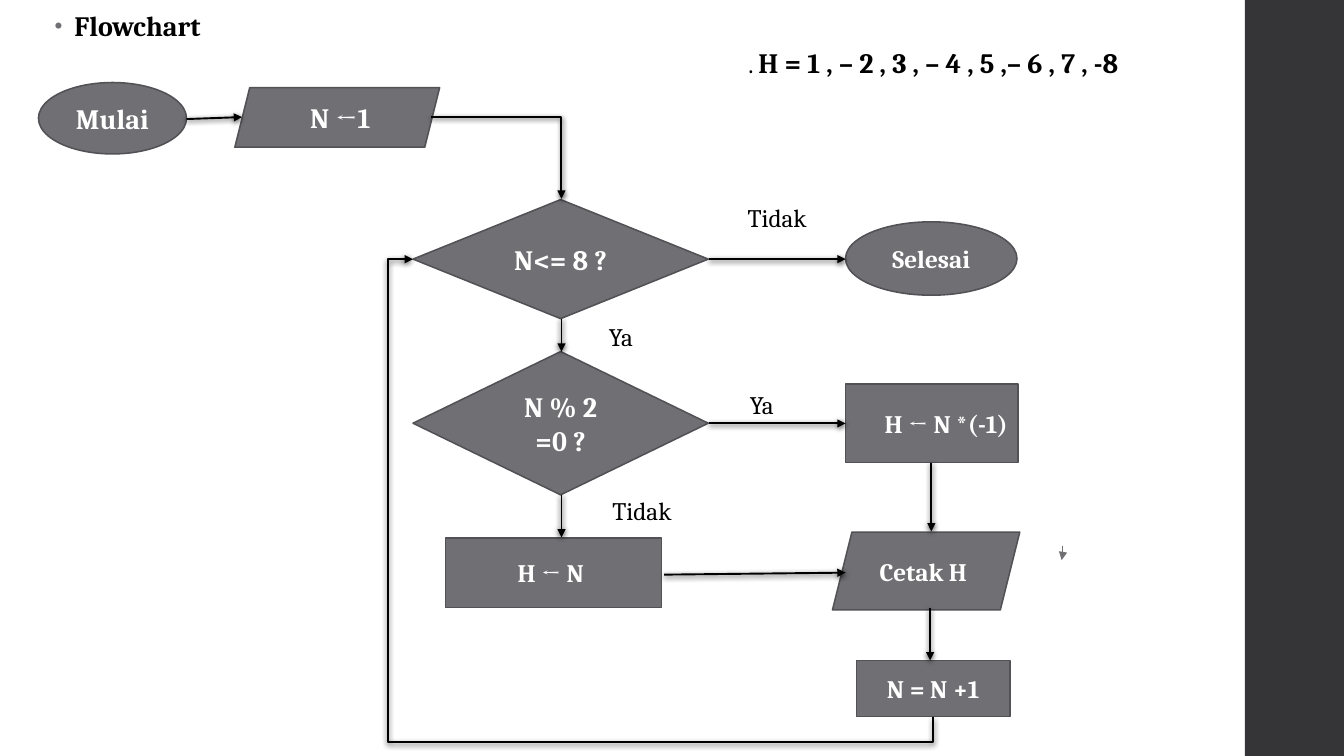
from lxml.etree import SubElement
from pptx import Presentation
from pptx.dml.color import RGBColor
from pptx.enum.shapes import MSO_CONNECTOR, MSO_SHAPE
from pptx.enum.text import MSO_ANCHOR, MSO_AUTO_SIZE, PP_ALIGN
from pptx.oxml.ns import qn
from pptx.util import Cm, Pt

GREY = RGBColor(0x6F, 0x6F, 0x74)
EDGE = RGBColor(0x52, 0x52, 0x56)
DARK = RGBColor(0x35, 0x35, 0x37)
BLACK = RGBColor(0, 0, 0)
WHITE = RGBColor(0xFF, 0xFF, 0xFF)


def put(item, form):
    for name, value in form.items():
        setattr(item, name, value)


def add(root, tag, **attrs):
    return SubElement(root, qn(tag), attrs)


class Chart:
    face = "Cambria"

    def __init__(self, slide):
        self.slide = slide
        self.shapes = slide.shapes

    def say(self, para, words, size, color=BLACK, bold=False):
        run = para.add_run()
        run.text = words
        put(run.font, {"name": self.face, "size": Pt(size), "bold": bold})
        run.font.color.rgb = color

    def fit(self, shape, align=PP_ALIGN.CENTER):
        frame = shape.text_frame
        put(frame, {"word_wrap": True, "vertical_anchor": MSO_ANCHOR.MIDDLE})
        para = frame.paragraphs[0]
        para.alignment = align
        return para

    def block(self, kind, place, fill, edge=None):
        shape = self.shapes.add_shape(kind, *map(Cm, place))
        shape.shadow.inherit = False
        shape.fill.solid()
        shape.fill.fore_color.rgb = fill
        if edge is None:
            shape.line.fill.background()
        else:
            shape.line.color.rgb = edge
            shape.line.width = Pt(1.1)
        return shape

    def node(self, kind, place, words, size=18, align=PP_ALIGN.CENTER):
        shape = self.block(kind, place, GREY, EDGE)
        self.say(self.fit(shape, align), words, size, WHITE, True)

    def label(self, place, *parts):
        box = self.shapes.add_textbox(*map(Cm, place))
        para = self.fit(box)
        for part in parts:
            self.say(para, *part)

    def bullet(self, place, words):
        body = self.slide.placeholders[1]
        put(body, dict(zip(("left", "top", "width", "height"), map(Cm, place))))
        frame = body.text_frame
        put(frame, {"auto_size": MSO_AUTO_SIZE.NONE, "vertical_anchor": MSO_ANCHOR.TOP})
        para = frame.paragraphs[0]
        put(para, {"line_spacing": 0.95, "space_before": Pt(0), "space_after": Pt(2)})
        props = para._p.get_or_add_pPr()
        props.set("marL", str(Cm(0.5)))
        props.set("indent", str(Cm(-0.5)))
        add(add(props, "a:buClr"), "a:srgbClr", val=str(GREY))
        add(props, "a:buSzPct", val="80000")
        add(props, "a:buFont", typeface="Arial")
        add(props, "a:buChar", char="•")
        self.say(para, words, 20, BLACK, True)

    def arrow(self, ends, kind=MSO_CONNECTOR.STRAIGHT, color=BLACK, width=1.35, shade=True):
        line = self.shapes.add_connector(kind, *map(Cm, ends))
        line.line.color.rgb = color
        line.line.width = Pt(width)
        props = line._element.spPr
        add(props.find(qn("a:ln")), "a:tailEnd", type="triangle")
        effect = add(props, "a:effectLst")
        if shade:
            cast = add(effect, "a:outerShdw", blurRad=str(Pt(4)), dist=str(Pt(1.2)),
                       dir="5400000", rotWithShape="0")
            tone = add(cast, "a:srgbClr", val="000000")
            add(tone, "a:alpha", val="75000")
        return line

    def bend(self, place, preset, turn=None, adjust=(), **look):
        left, top, width, height = place
        line = self.arrow((left, top, left + width, top + height), MSO_CONNECTOR.ELBOW, **look)
        props = line._element.spPr
        for name, value in (turn or {}).items():
            props.find(qn("a:xfrm")).set(name, value)
        shape = props.find(qn("a:prstGeom"))
        shape.set("prst", preset)
        guides = shape.find(qn("a:avLst"))
        for rank, value in enumerate(adjust, 1):
            add(guides, "a:gd", name=f"adj{rank}", fmla=f"val {value}")


def main():
    deck = Presentation()
    put(deck, {"slide_width": Cm(33.87), "slide_height": Cm(19.05)})
    slide = deck.slides.add_slide(deck.slide_layouts[1])
    title = slide.shapes.title._element
    title.getparent().remove(title)
    flow = Chart(slide)

    flow.block(MSO_SHAPE.RECTANGLE, (31.37, 0, 2.5, 19.05), DARK)
    flow.bullet((1.12, 0.15, 29.57, 16.2), "Flowchart")

    oval, box = MSO_SHAPE.OVAL, MSO_SHAPE.RECTANGLE
    test, data = MSO_SHAPE.DIAMOND, MSO_SHAPE.PARALLELOGRAM
    for node in (
        (oval, (0.97, 2.08, 3.73, 1.8), "Mulai", 20),
        (data, (5.92, 2.21, 5.16, 1.5), " N ←1", 20),
        (test, (10.41, 5.03, 7.44, 3), "N<= 8 ?", 20),
        (test, (10.41, 8.86, 7.44, 3.61), "N % 2 =0 ?", 20),
        (box, (21.31, 9.68, 4.34, 1.98), "H ← N *(-1)", 18, PP_ALIGN.RIGHT),
        (data, (20.98, 13.41, 4.72, 1.96), "Cetak H "),
        (box, (11.23, 13.56, 5.44, 1.75), "H ← N "),
        (oval, (21.31, 5.59, 4.32, 1.85), "Selesai"),
        (box, (21.59, 16.64, 3.86, 1.42), "N = N +1"),
    ):
        flow.node(*node)

    for ends in (
        (14.15, 8.03, 14.15, 8.86),
        (14.15, 12.47, 14.15, 13.54),
        (16.74, 14.48, 21.31, 14.43),
        (17.86, 10.67, 21.31, 10.67),
        (23.44, 15.32, 23.44, 16.64),
        (23.47, 11.66, 23.47, 13.39),
        (4.7, 3, 6.1, 2.95),
        (17.86, 6.53, 21.31, 6.53),
    ):
        flow.arrow(ends)

    turn = {"rot": "5400000"}
    flow.bend((26.59, 13.92, 0.36, 0.03), "bentConnector3", turn,
              color=GREY, width=0.75, shade=False)
    flow.bend((10.87, 2.95, 3.28, 2.06), "bentConnector2")
    flow.bend((11.2, 5.74, 11.53, 13.11), "bentConnector4",
              {**turn, "flipH": "1"}, (-5500, 104800))

    flow.label((16.31, 0.94, 14.43, 1.27), (". ", 18),
               ("H = 1 , – 2 , 3 , – 4 , 5 ,– 6 , 7 , -8", 20, BLACK, True))
    flow.label((17.86, 5.03, 3.45, 0.91), ("Tidak", 18))
    flow.label((14.66, 8.05, 1.98, 0.84), ("Ya", 18))
    flow.label((18.31, 9.88, 1.78, 0.61), ("Ya", 18))
    plate = flow.block(box, (14.63, 12.4, 3.1, 0.91), WHITE, WHITE)
    flow.say(flow.fit(plate), "Tidak", 18)

    deck.save("out.pptx")


if __name__ == "__main__":
    main()
